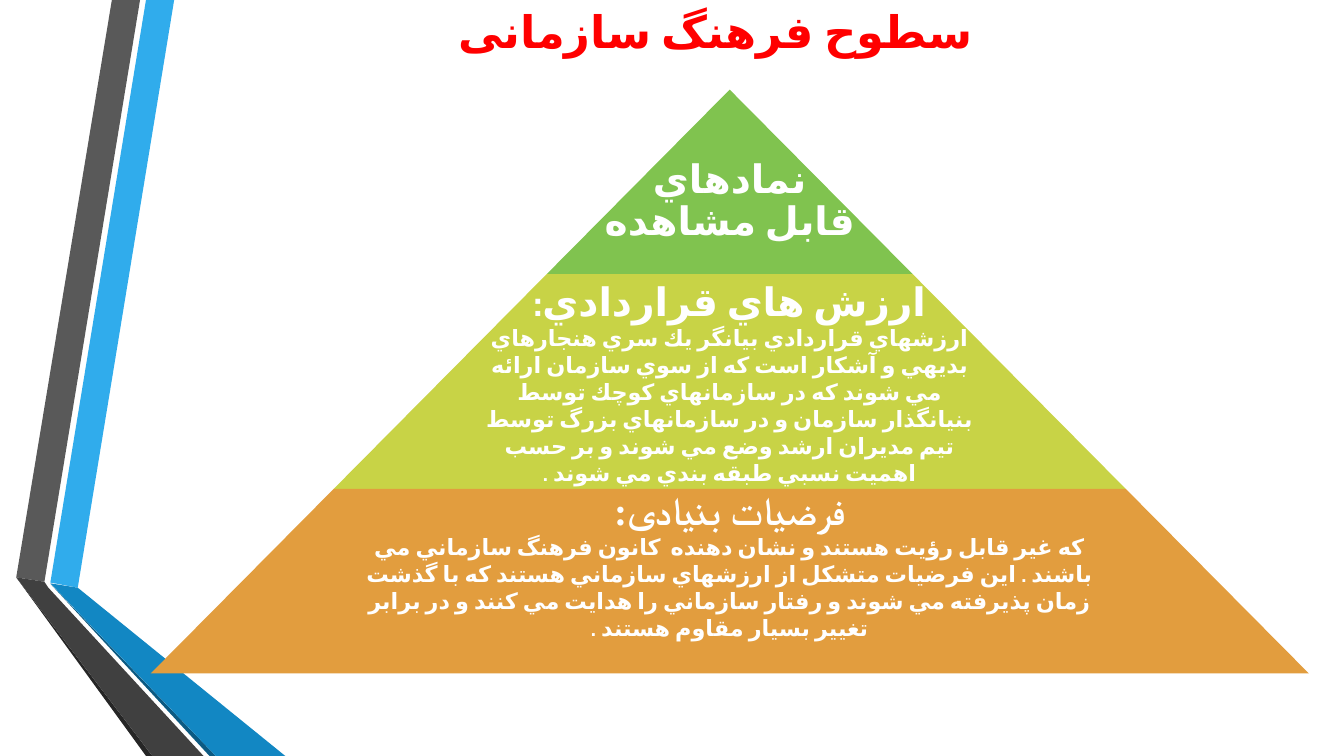
import pptx
import pptx.util
import pptx.dml.color
import pptx.enum.lang
import pptx.enum.shapes
import pptx.enum.text
import lxml.etree
from pptx.oxml.ns import qn

Cm = pptx.util.Cm
COLORS = {
    "title": "FF0000", "text": "FFFFFF",
    "blue": "30ACEC", "blue_fold": "1287C3", "blue_edge": "0C5A82",
    "gray": "595959", "gray_fold": "404040", "gray_edge": "262626",
    "symbols": "80C34F", "values": "C8D346", "assumptions": "E29D3E",
}


def paint(shape, color):
    shape.shadow.inherit = False
    shape.fill.solid()
    shape.fill.fore_color.rgb = pptx.dml.color.RGBColor.from_string(COLORS[color])
    shape.line.fill.background()


def format_paragraph(paragraph, size, font_name, color, line_spacing=1.0):
    """Centre a right-to-left Persian paragraph and set its Latin and Arabic fonts."""
    paragraph.alignment = pptx.enum.text.PP_ALIGN.CENTER
    paragraph.line_spacing = line_spacing
    paragraph.space_before = paragraph.space_after = pptx.util.Pt(0)
    paragraph._p.get_or_add_pPr().set("rtl", "1")
    for run in paragraph.runs:
        run.font.language_id = pptx.enum.lang.MSO_LANGUAGE_ID.FARSI
        run.font.size = pptx.util.Pt(size)
        run.font.bold = True
        run.font.color.rgb = pptx.dml.color.RGBColor.from_string(COLORS[color])
        run.font.name = font_name
        arabic_font = lxml.etree.SubElement(run._r.get_or_add_rPr(), qn("a:cs"))
        arabic_font.set("typeface", font_name)


presentation = pptx.Presentation()
presentation.slide_width = Cm(33.87)
presentation.slide_height = Cm(19.05)
slide = presentation.slides.add_slide(presentation.slide_layouts[5])

# Folded ribbons on the left, points in centimetres
ribbons = [
    ("blue", [(1.27, 14.68), (1.96, 14.81), (4.39, 0), (3.68, 0)]),
    ("gray", [(3.53, 0), (2.82, 0), (0.41, 14.55), (1.12, 14.66)]),
    ("gray_edge", [(0.41, 14.55), (3.68, 19.05), (3.84, 19.05)]),
    ("blue_edge", [(1.27, 14.71), (5.28, 19.05), (5.44, 19.05)]),
    ("blue_fold", [(1.27, 14.7), (5.44, 19.05), (7.19, 19.05), (1.96, 14.81)]),
    ("gray_fold", [(5.13, 19.05), (1.22, 14.81), (1.12, 14.66), (0.41, 14.55),
                   (3.84, 19.05)]),
]
for color, points in ribbons:
    corners = [(Cm(x), Cm(y)) for x, y in points]
    builder = slide.shapes.build_freeform(*corners[0])
    builder.add_line_segments(corners[1:], close=True)
    paint(builder.convert_to_shape(), color)

title = slide.shapes.title
title.left, title.top, title.width, title.height = Cm(4.11), Cm(0), Cm(27.84), Cm(3.38)
title.text_frame.text = "سطوح فرهنگ سازمانی"
title.text_frame.auto_size = pptx.enum.text.MSO_AUTO_SIZE.NONE
title.text_frame.vertical_anchor = pptx.enum.text.MSO_ANCHOR.TOP
title.text_frame.margin_top = Cm(0.1)
format_paragraph(title.text_frame.paragraphs[0], 32, "Cabin", "title")

# Pyramid levels: colour, height, text width share, top and bottom margins,
# line spacing, and lines of (text, size, font)
levels = [
    ("symbols", 4.65, 1, 1.07, 0.08, 0.9, [
        ("نمادهاي", 28, "Cabin"),
        ("قابل مشاهده", 28, "Cabin"),
    ]),
    ("values", 5.41, 0.65, 0.1, 0.1, 1.0, [
        ("ارزش هاي قراردادي:", 28, "Cabin"),
        ("ارزشهاي قراردادي بيانگر يك سري هنجارهاي بديهي و آشكار است كه از سوي "
         "سازمان ارائه مي شوند كه در سازمانهاي كوچك توسط بنيانگذار سازمان و در "
         "سازمانهاي بزرگ توسط تيم مديران ارشد وضع مي شوند و بر حسب اهميت نسبي "
         "طبقه بندي مي شوند .", 16, "Cabin"),
    ]),
    ("assumptions", 4.65, 0.65, 0, 0.89, 1.0, [
        ("فرضیات بنیادی:", 28, "Times New Roman"),
        ("كه غير قابل رؤيت هستند و نشان دهنده  كانون فرهنگ سازماني مي باشند . "
         "اين فرضيات متشكل از ارزشهاي سازماني هستند كه با گذشت زمان پذيرفته مي "
         "شوند و رفتار سازماني را هدايت مي كنند و در برابر تغيير بسيار مقاوم "
         "هستند .", 16, "Cabin"),
    ]),
]
SLOPE = 0.992
center, top, width = 18.39, 2.26, 0
for color, height, share, margin_top, margin_bottom, line_spacing, lines in levels:
    width += 2 * SLOPE * height
    band = slide.shapes.add_shape(
        pptx.enum.shapes.MSO_SHAPE.TRAPEZOID,
        Cm(center - width / 2), Cm(top), Cm(width), Cm(height))
    band.adjustments[0] = SLOPE
    paint(band, color)

    text_width = width * share
    text_box = slide.shapes.add_textbox(
        Cm(center - text_width / 2), Cm(top), Cm(text_width), Cm(height))
    text_frame = text_box.text_frame
    text_frame.word_wrap = True
    text_frame.vertical_anchor = pptx.enum.text.MSO_ANCHOR.MIDDLE
    text_frame.margin_left = text_frame.margin_right = Cm(0.1)
    text_frame.margin_top, text_frame.margin_bottom = Cm(margin_top), Cm(margin_bottom)
    text_frame.text = "\n".join(text for text, size, font_name in lines)
    for paragraph, (text, size, font_name) in zip(text_frame.paragraphs, lines):
        format_paragraph(paragraph, size, font_name, "text", line_spacing)
    top += height

presentation.save("out.pptx")
